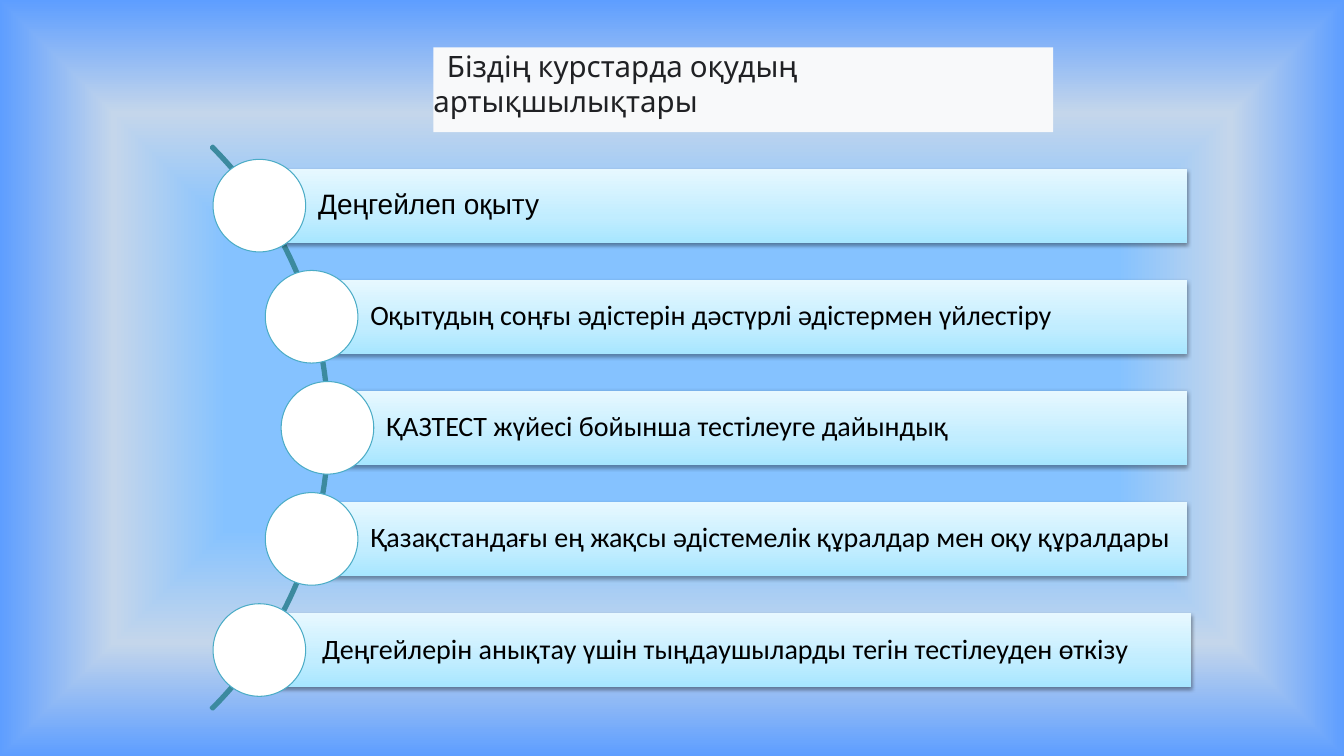
import math
from dataclasses import dataclass

from lxml import etree
from pptx import Presentation
from pptx import util as u
from pptx.dml.color import RGBColor
from pptx.enum import shapes, text
from pptx.oxml import ns

SLIDE_WIDTH, SLIDE_HEIGHT = u.Inches(13.33), u.Inches(7.5)
COLUMNS = 100
CELL = SLIDE_WIDTH / COLUMNS


@dataclass(frozen=True)
class Theme:
    background: tuple = ((40, "85C2FF"), (70, "C4D6EB"), (100, "5E9EFF"))
    bar: tuple = ((0, "A7E6FF"), (35, "C1EDFF"), (100, "E7F8FF"))
    arc: str = "3C8A9F"
    circle: str = "FFFFFF"
    circle_line: str = "4BACC6"
    label: str = "000000"
    title: str = "202124"
    title_fill: str = "F8F9FA"
    title_font: str = "Karla"
    title_size: float = 21
    title_leading: float = 25
    label_size: float = 20


@dataclass(frozen=True)
class Box:
    left: float
    top: float
    width: float
    height: float

    def lengths(self):
        return [cells(value) for value in (self.left, self.top, self.width, self.height)]


THEME = Theme()
TITLE = "Біздің курстарда оқудың артықшылықтары"
ADVANTAGES = (
    ("Деңгейлеп оқыту", "Arial", 0),
    ("Оқытудың соңғы әдістерін дәстүрлі әдістермен үйлестіру", "Calibri", 0),
    ("ҚАЗТЕСТ жүйесі бойынша тестілеуге дайындық", "Calibri", 0),
    ("Қазақстандағы ең жақсы әдістемелік құралдар мен оқу құралдары", "Calibri", 0),
    ("Деңгейлерін анықтау үшін тыңдаушыларды тегін тестілеуден өткізу", "Calibri", 0.3),
)


def cells(count):
    return u.Emu(round(count * CELL))


def paint_solid(fill, color):
    fill.solid()
    fill.fore_color.rgb = RGBColor.from_string(color)


def paint_gradient(fill, element, stops, direction):
    fill.gradient()
    gradient = element.find(".//" + ns.qn("a:gradFill"))
    stop_xml = "".join(
        f'<a:gs pos="{position * 1000}"><a:srgbClr val="{color}"/></a:gs>'
        for position, color in stops
    )
    replacement = etree.fromstring(
        f'<a:gradFill {ns.nsdecls("a")} rotWithShape="1">'
        f"<a:gsLst>{stop_xml}</a:gsLst>{direction}</a:gradFill>"
    )
    gradient.getparent().replace(gradient, replacement)


def add_shadow(shape):
    shape.shadow.inherit = False
    effects = shape._element.spPr.find(ns.qn("a:effectLst"))
    effects.append(etree.fromstring(
        f'<a:outerShdw {ns.nsdecls("a")} blurRad="{u.Pt(3.1)}" dist="{u.Pt(1.6)}" '
        'dir="5400000" rotWithShape="0"><a:srgbClr val="000000">'
        '<a:alpha val="38000"/></a:srgbClr></a:outerShdw>'
    ))


def format_text(frame, insets, font, size, color):
    frame.word_wrap = True
    frame.auto_size = text.MSO_AUTO_SIZE.NONE
    frame.vertical_anchor = text.MSO_ANCHOR.MIDDLE
    frame.margin_left, frame.margin_top, frame.margin_right, frame.margin_bottom = map(cells, insets)
    paragraph = frame.paragraphs[0]
    paragraph.alignment = text.PP_ALIGN.LEFT
    paragraph.font.name = font
    paragraph.font.size = u.Pt(size)
    paragraph.font.color.rgb = RGBColor.from_string(color)
    return paragraph


def draw_background(slide):
    paint_gradient(
        slide.background.fill, slide._element, THEME.background,
        '<a:path path="shape"><a:fillToRect l="50000" t="50000" r="50000" b="50000"/></a:path>',
    )


def draw_title(slide, box):
    title = slide.shapes.title
    title.left, title.top, title.width, title.height = box.lengths()
    paint_solid(title.fill, THEME.title_fill)
    title.text_frame.text = TITLE
    paragraph = format_text(
        title.text_frame, (0, 0, 0, 0.9), THEME.title_font, THEME.title_size, THEME.title
    )
    paragraph.line_spacing = u.Pt(THEME.title_leading)
    paragraph._p.get_or_add_pPr().set("indent", str(cells(1)))


def add_arc(slide, center_x, center_y, radius):
    box = Box(center_x - radius, center_y - radius, 2 * radius, 2 * radius)
    arc = slide.shapes.add_shape(shapes.MSO_SHAPE.BLOCK_ARC, *box.lengths())
    arc.adjustments[0], arc.adjustments[1], arc.adjustments[2] = 189, 27, 0.003
    arc.shadow.inherit = False
    paint_solid(arc.fill, THEME.arc)
    paint_solid(arc.line.fill, THEME.arc)
    arc.line.width = u.Pt(2)


def add_bar(slide, box, label, font):
    bar = slide.shapes.add_shape(shapes.MSO_SHAPE.RECTANGLE, *box.lengths())
    paint_gradient(bar.fill, bar._element, THEME.bar, '<a:lin ang="16200000" scaled="0"/>')
    bar.line.fill.background()
    add_shadow(bar)
    bar.text_frame.text = label
    paragraph = format_text(
        bar.text_frame, (4.37, 0.45, 0.45, 0.45), font, THEME.label_size, THEME.label
    )
    paragraph.line_spacing = 0.9


def add_circle(slide, center_x, center_y, diameter):
    box = Box(center_x - diameter / 2, center_y - diameter / 2, diameter, diameter)
    circle = slide.shapes.add_shape(shapes.MSO_SHAPE.OVAL, *box.lengths())
    circle.shadow.inherit = False
    paint_solid(circle.fill, THEME.circle)
    paint_solid(circle.line.fill, THEME.circle_line)
    circle.line.width = u.Pt(0.75)


def draw_advantages(slide, box):
    center_x = box.left - box.height / 2
    center_y = box.top + box.height / 2
    radius = box.height * math.sqrt(0.5)
    add_arc(slide, center_x, center_y, radius)

    orbit = radius - 0.15
    pitch = (box.height - 0.6) / len(ADVANTAGES)
    bar_height = pitch * 2 / 3
    for index, (label, font, shift) in enumerate(ADVANTAGES):
        offset = (index - (len(ADVANTAGES) - 1) / 2) * pitch
        x = center_x + math.sqrt(orbit ** 2 - offset ** 2)
        y = center_y + offset
        bar_box = Box(x + shift, y - bar_height / 2, box.left + box.width - x, bar_height)
        add_bar(slide, bar_box, label, font)
        add_circle(slide, x, y, bar_height * 1.25)


def main():
    presentation = Presentation()
    presentation.slide_width, presentation.slide_height = SLIDE_WIDTH, SLIDE_HEIGHT
    slide = presentation.slides.add_slide(presentation.slide_layouts[5])
    draw_background(slide)
    draw_title(slide, Box(32.25, 3.53, 46.12, 6.3))
    draw_advantages(slide, Box(15.83, 10.87, 72.52, 41.94))
    presentation.save("out.pptx")


if __name__ == "__main__":
    main()
